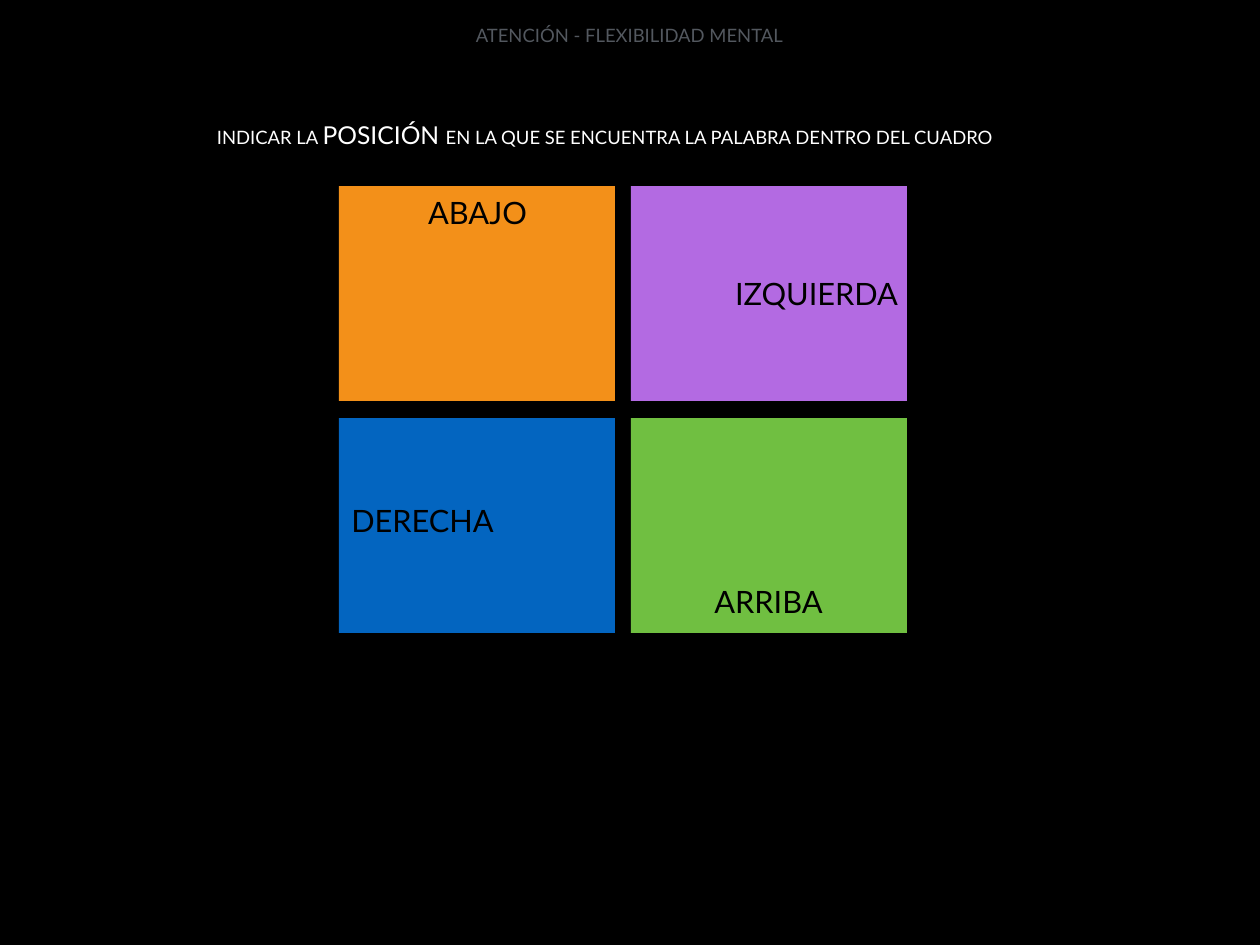
"""Build the mental flexibility slide with four coloured squares and position words."""
from pptx import Presentation
from pptx.dml.color import RGBColor
from pptx.enum.shapes import MSO_SHAPE
from pptx.enum.text import MSO_ANCHOR, MSO_AUTO_SIZE, PP_ALIGN
from pptx.util import Pt

PX = 10320
BLACK = RGBColor(0x00, 0x00, 0x00)
WHITE = RGBColor(0xFF, 0xFF, 0xFF)
GRAY = RGBColor(0x53, 0x58, 0x5F)
ORANGE = RGBColor(0xF3, 0x90, 0x19)
PURPLE = RGBColor(0xB3, 0x6A, 0xE2)
BLUE = RGBColor(0x03, 0x65, 0xC0)
GREEN = RGBColor(0x70, 0xBF, 0x41)

prs = Presentation()
prs.slide_width, prs.slide_height = 1260 * PX, 945 * PX
s = prs.slides.add_slide(prs.slide_layouts[6])
s.background.fill.solid()
s.background.fill.fore_color.rgb = BLACK


def add_text(*runs, box, color=BLACK):
    tf = s.shapes.add_textbox(*[v * PX for v in box]).text_frame
    tf.margin_left = tf.margin_right = tf.margin_top = tf.margin_bottom = 5 * PX
    tf.word_wrap = False
    tf.auto_size = MSO_AUTO_SIZE.SHAPE_TO_FIT_TEXT
    tf.vertical_anchor = MSO_ANCHOR.MIDDLE
    p = tf.paragraphs[0]
    p.alignment = PP_ALIGN.CENTER
    for text, size in runs:
        r = p.add_run()
        r.text = text
        r.font.name = "Lato"
        r.font.size = Pt(size)
        r.font.color.rgb = color


add_text(("ATENCIÓN - FLEXIBILIDAD MENTAL", 15), box=(470, 19, 319, 32), color=GRAY)

for i, color in enumerate([ORANGE, PURPLE, BLUE, GREEN]):
    row, col = divmod(i, 2)
    x, y = 339 + col * 292, 186 + row * 232
    sp = s.shapes.add_shape(MSO_SHAPE.RECTANGLE, x * PX, y * PX, 276 * PX, 215 * PX)
    sp.shadow.inherit = False
    sp.fill.solid()
    sp.fill.fore_color.rgb = color
    sp.line.fill.background()

add_text(
    ("INDICAR LA ", 15),
    ("POSICIÓN ", 20),
    ("EN LA QUE SE ENCUENTRA LA PALABRA DENTRO DEL CUADRO", 15),
    box=(210, 115, 790, 39),
    color=WHITE,
)

for word, x, y, w in [
    ("ABAJO", 421, 189, 113),
    ("ARRIBA", 706, 578, 125),
    ("DERECHA", 345, 497, 155),
    ("IZQUIERDA", 727, 270, 179),
]:
    add_text((word, 25), box=(x, y, w, 47))

prs.save("out.pptx")
